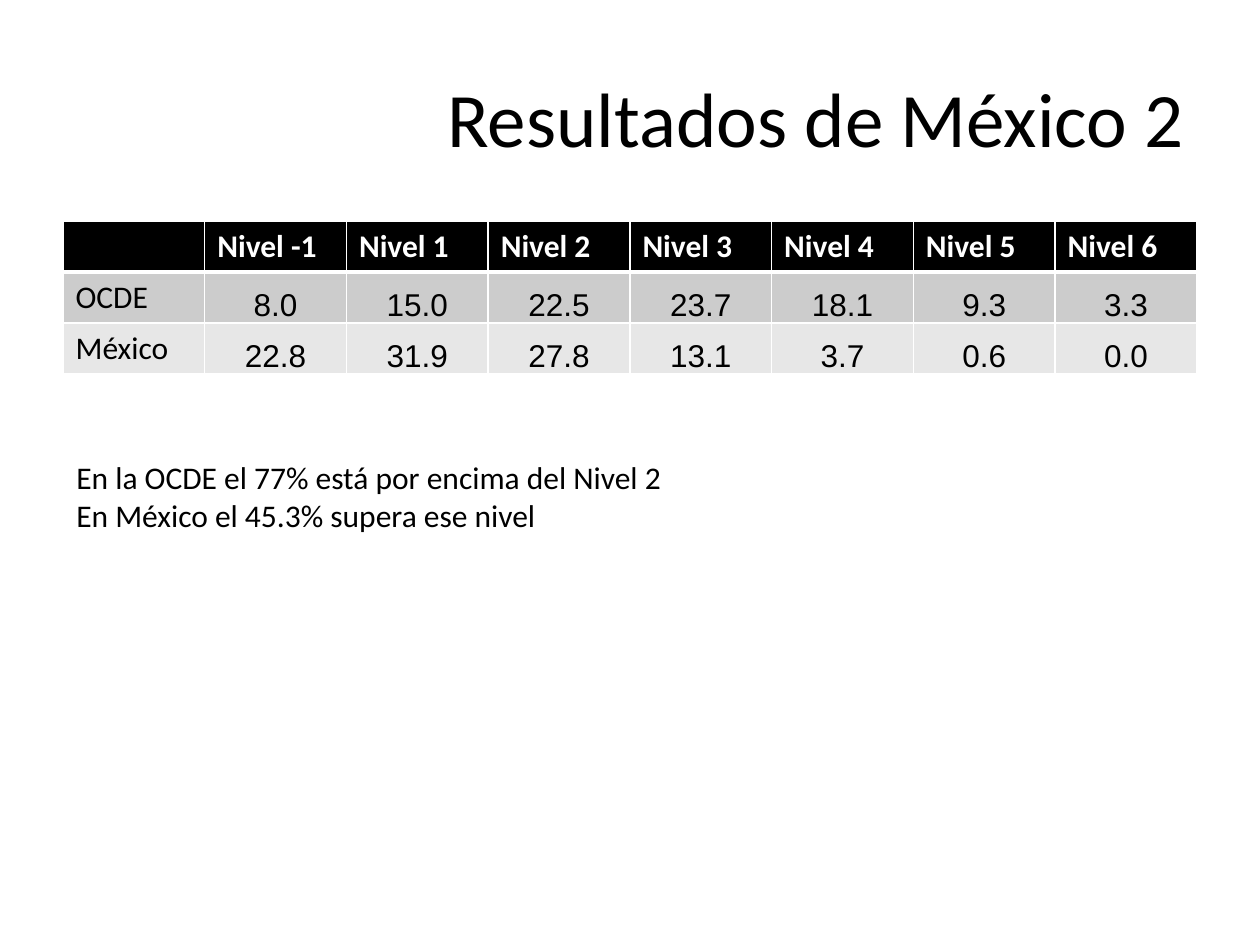
from lxml import etree
from pptx import Presentation
from pptx import util as u
from pptx.dml.color import RGBColor
from pptx.enum import text
from pptx.oxml import ns

PX = 914400 / 126
BLACK = RGBColor(0, 0, 0)
WHITE = RGBColor(255, 255, 255)
ROW_FILLS = [BLACK, RGBColor(0xCC, 0xCC, 0xCC), RGBColor(0xE7, 0xE7, 0xE7)]
ROWS = [
    ["", "Nivel -1", "Nivel 1", "Nivel 2", "Nivel 3", "Nivel 4", "Nivel 5", "Nivel 6"],
    ["OCDE", "8.0", "15.0", "22.5", "23.7", "18.1", "9.3", "3.3"],
    ["México", "22.8", "31.9", "27.8", "13.1", "3.7", "0.6", "0.0"],
]


def px(*lengths):
    return [u.Emu(round(length * PX)) for length in lengths]


def style(frame, size, color=BLACK, font="Calibri", bold=False, align=None):
    for para in frame.paragraphs:
        para.alignment = align
        for span in para.runs:
            span.font.size = u.Pt(size)
            span.font.name = font
            span.font.bold = bold
            span.font.color.rgb = color


deck = Presentation()
deck.slide_width, deck.slide_height = px(1260, 945)
page = deck.slides.add_slide(deck.slide_layouts[6])

title = page.shapes.add_textbox(*px(63, 38, 1134, 157)).text_frame
title.word_wrap = True
title.vertical_anchor = text.MSO_ANCHOR.MIDDLE
title.text = "Resultados de México 2"
style(title, 44, align=text.PP_ALIGN.RIGHT)

table = page.shapes.add_table(3, 8, *px(63, 221, 1134, 153)).table
for row, labels in enumerate(ROWS):
    for column, label in enumerate(labels):
        cell = table.cell(row, column)
        cell.fill.solid()
        cell.fill.fore_color.rgb = ROW_FILLS[row]
        cell.text_frame.text = label
        if row == 0:
            style(cell.text_frame, 18, WHITE, bold=True)
        elif column == 0:
            style(cell.text_frame, 18)
        else:
            style(cell.text_frame, 18, font="Arial", align=text.PP_ALIGN.CENTER)
            cell.vertical_anchor = text.MSO_ANCHOR.BOTTOM
            cell.margin_left, cell.margin_top, cell.margin_right, cell.margin_bottom = px(1, 1, 1, 0)

        properties = cell._tc.get_or_add_tcPr()
        for position, side in enumerate("LRTB"):
            thick = (row, side) in [(0, "B"), (1, "T")]
            border = etree.Element(ns.qn(f"a:ln{side}"), w=str(u.Pt(3 if thick else 1)))
            fill = etree.SubElement(border, ns.qn("a:solidFill"))
            etree.SubElement(fill, ns.qn("a:srgbClr"), val=str(WHITE))
            properties.insert(position, border)

summary = page.shapes.add_textbox(*px(64, 452, 1121, 89)).text_frame
summary.word_wrap = True
summary.auto_size = text.MSO_AUTO_SIZE.SHAPE_TO_FIT_TEXT
summary.text = "En la OCDE el 77% está por encima del Nivel 2\nEn México el 45.3% supera ese nivel"
style(summary, 18)

deck.save("out.pptx")
